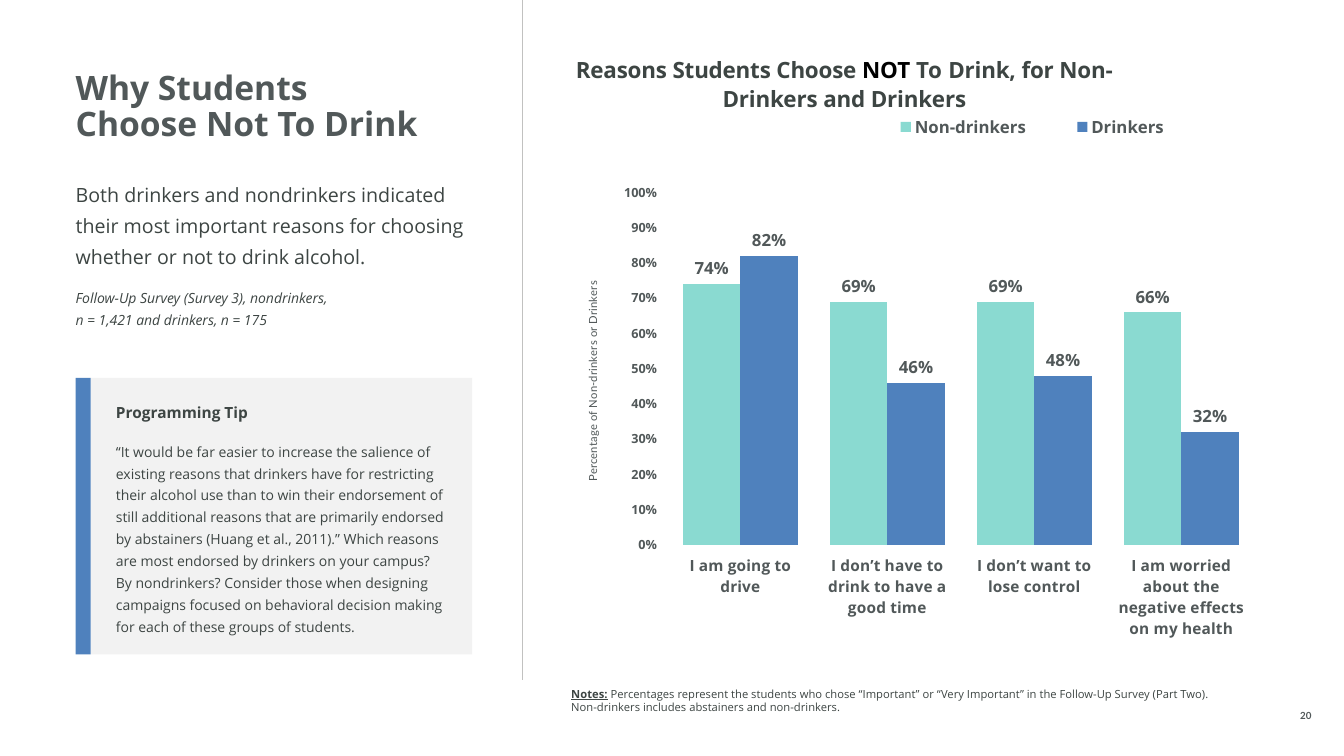
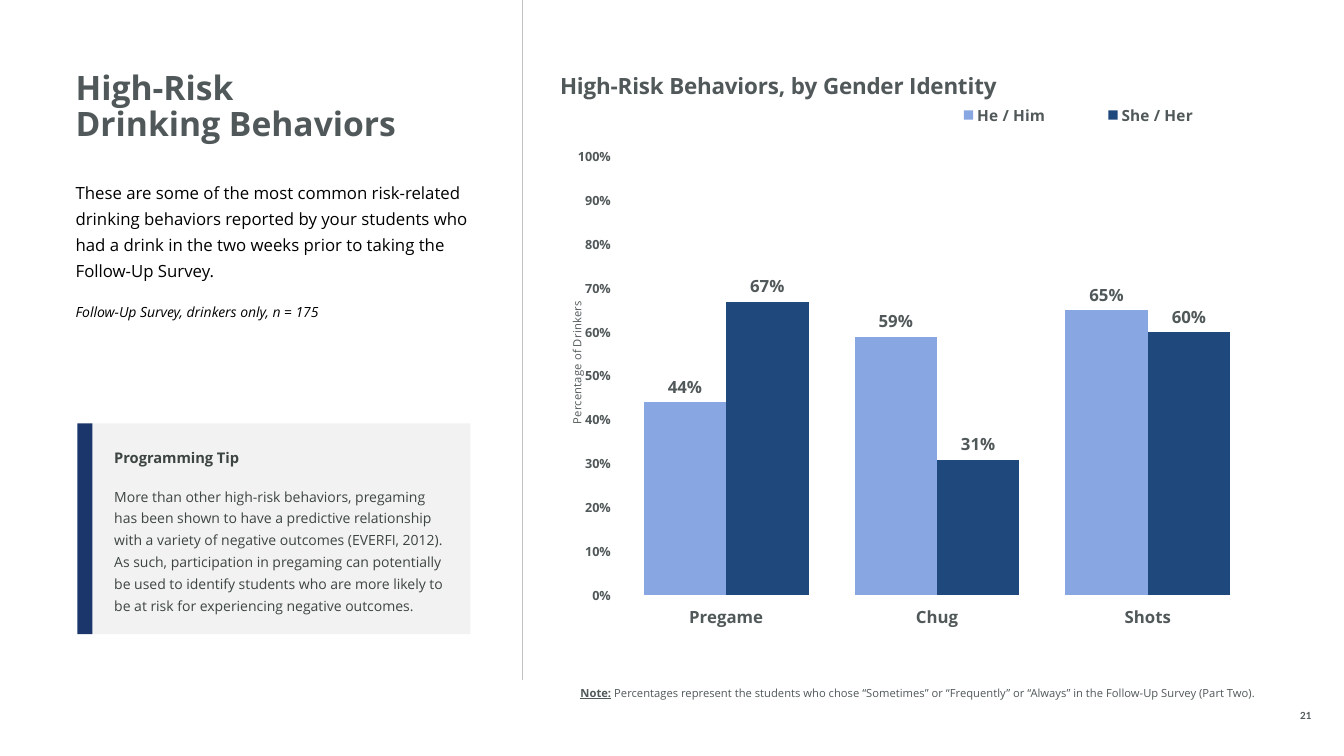
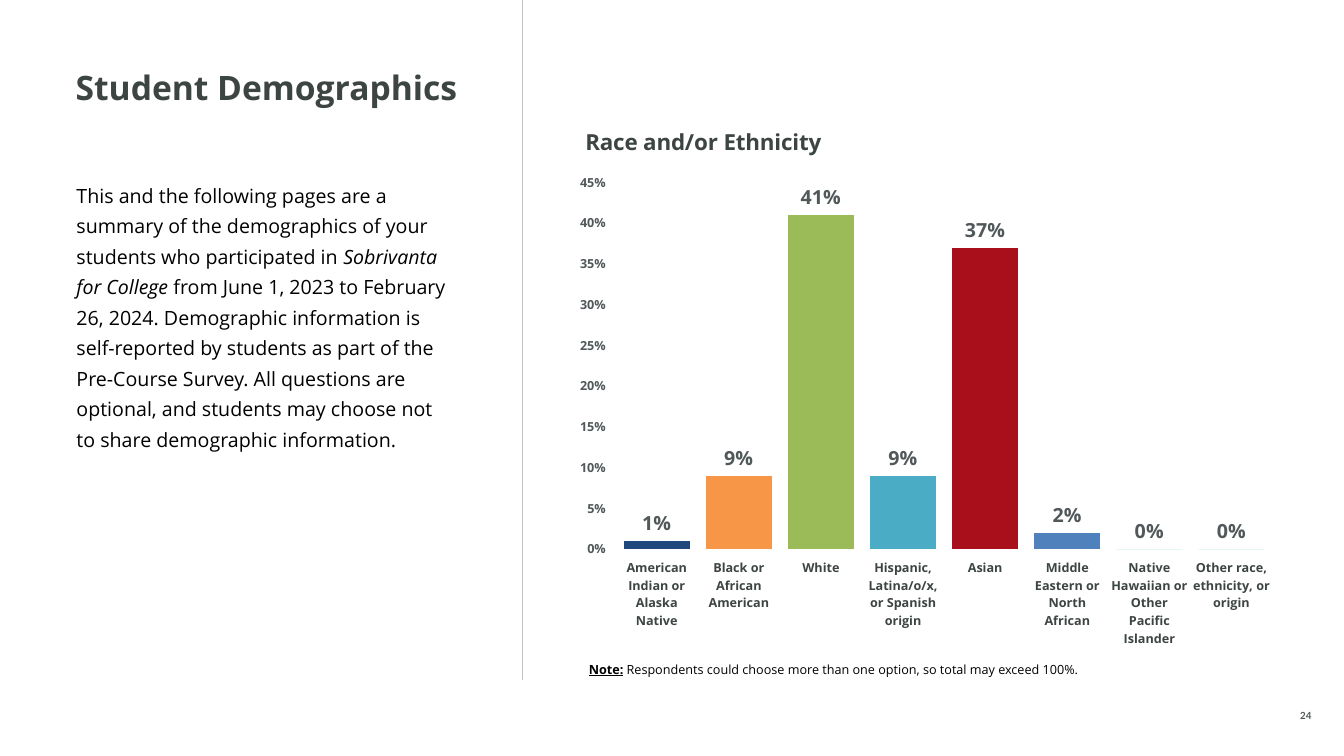
from dataclasses import dataclass
from typing import Optional

from lxml import etree
from pptx import Presentation
from pptx.chart.data import CategoryChartData
from pptx.dml.color import RGBColor
from pptx.enum.chart import XL_CHART_TYPE, XL_LABEL_POSITION, XL_LEGEND_POSITION
from pptx.enum.shapes import MSO_CONNECTOR, MSO_SHAPE
from pptx.enum.text import MSO_ANCHOR, PP_ALIGN
from pptx.oxml.ns import qn
from pptx.util import Emu, Inches, Pt

# Enum members
COLUMNS = XL_CHART_TYPE.COLUMN_CLUSTERED
OUTSIDE_END = XL_LABEL_POSITION.OUTSIDE_END
LEGEND_TOP = XL_LEGEND_POSITION.TOP
STRAIGHT = MSO_CONNECTOR.STRAIGHT
RECTANGLE = MSO_SHAPE.RECTANGLE
TOP, MIDDLE, BOTTOM = MSO_ANCHOR.TOP, MSO_ANCHOR.MIDDLE, MSO_ANCHOR.BOTTOM
LEFT, CENTER = PP_ALIGN.LEFT, PP_ALIGN.CENTER

# Slide grid: 160 columns by 90 rows
WIDTH, HEIGHT = Inches(13.33), Inches(7.5)
COLUMN, ROW = WIDTH / 160, HEIGHT / 90

# Theme
SANS, LATO = "Open Sans", "Lato"
BLACK = RGBColor(0x00, 0x00, 0x00)
INK = RGBColor(0x3D, 0x45, 0x43)
SLATE = RGBColor(0x51, 0x58, 0x59)
RULE = RGBColor(0xC1, 0xC1, 0xC0)
PALE = RGBColor(0xF2, 0xF2, 0xF2)
MINT = RGBColor(0x8A, 0xDA, 0xD1)
BLUE = RGBColor(0x4F, 0x81, 0xBD)
SKY = RGBColor(0x88, 0xA6, 0xE1)
DEEP_BLUE = RGBColor(0x1F, 0x49, 0x7D)
NAVY = RGBColor(0x1B, 0x36, 0x6A)
ORANGE = RGBColor(0xF7, 0x96, 0x46)
GREEN = RGBColor(0x9B, 0xBB, 0x59)
AQUA = RGBColor(0x4B, 0xAC, 0xC6)
RED = RGBColor(0xA9, 0x0E, 0x1B)
TEAL = RGBColor(0x3C, 0xBE, 0xAD)


@dataclass(frozen=True)
class Box:
    """An area in grid columns and rows."""
    left: float
    top: float
    width: float = 0
    height: float = 0

    def emu(self) -> tuple[Emu, Emu, Emu, Emu]:
        return (Emu(int(self.left * COLUMN)), Emu(int(self.top * ROW)),
                Emu(int(self.width * COLUMN)), Emu(int(self.height * ROW)))


@dataclass(frozen=True)
class Span:
    text: str
    bold: bool = False
    italic: bool = False
    underline: bool = False
    color: Optional[RGBColor] = None


@dataclass(frozen=True)
class Para:
    spans: list[Span]
    size: float
    before: float = 0


@dataclass(frozen=True)
class Tip:
    bar: Box
    panel: Box
    color: RGBColor
    heading_size: float
    advice: str


@dataclass(frozen=True)
class Series:
    name: str
    values: list[float]
    color: RGBColor


@dataclass(frozen=True)
class ChartSpec:
    area: Box
    plot: Box
    title: list[Span]
    title_at: Box
    title_color: RGBColor
    categories: list[str]
    series: list[Series]
    top_value: float
    step: float
    gap: int
    category_size: float
    label_size: float
    category_color: RGBColor = SLATE
    axis_title: str = ""
    axis_font: str = SANS
    axis_at: Optional[Box] = None
    legend: Optional[Box] = None
    legend_size: float = 12
    point_colors: tuple[RGBColor, ...] = ()


@dataclass(frozen=True)
class Page:
    number: str
    title: str
    title_color: RGBColor
    body_box: Box
    body: list[Para]
    body_color: RGBColor
    note_box: Box
    note: list[Para]
    note_color: RGBColor
    chart: ChartSpec
    tip: Optional[Tip] = None


def set_font(font, size: float, color: RGBColor, name: str = SANS,
             bold: bool = False) -> None:
    font.name, font.size, font.bold = name, Pt(size), bold
    font.color.rgb = color


def write_text(frame, paras: list[Para], *, color: RGBColor, font: str = SANS,
               spacing: Optional[float] = None, align=LEFT) -> None:
    for index, para in enumerate(paras):
        paragraph = frame.paragraphs[0] if index == 0 else frame.add_paragraph()
        paragraph.alignment = align
        if spacing:
            paragraph.line_spacing = spacing
        if para.before:
            paragraph.space_before = Pt(para.before)
        for span in para.spans:
            for line_index, line in enumerate(span.text.split("\n")):
                if line_index:
                    paragraph.add_line_break()
                run = paragraph.add_run()
                run.text = line
                set_font(run.font, para.size, span.color or color, font, span.bold)
                run.font.italic = span.italic
                run.font.underline = span.underline


def prepare_frame(frame, anchor=TOP, side: float = 0) -> None:
    frame.word_wrap = True
    frame.vertical_anchor = anchor
    frame.margin_left = frame.margin_right = Inches(side)
    frame.margin_top = frame.margin_bottom = 0


def add_text(slide, box: Box, paras: list[Para], *, anchor=TOP, **text_format) -> None:
    frame = slide.shapes.add_textbox(*box.emu()).text_frame
    prepare_frame(frame, anchor)
    write_text(frame, paras, **text_format)


def add_panel(slide, box: Box, color: RGBColor):
    panel = slide.shapes.add_shape(RECTANGLE, *box.emu())
    panel.shadow.inherit = False
    panel.fill.solid()
    panel.fill.fore_color.rgb = color
    panel.line.fill.background()
    return panel


def add_tip(slide, tip: Tip) -> None:
    frame = add_panel(slide, tip.panel, PALE).text_frame
    prepare_frame(frame, MIDDLE, 0.25)
    write_text(frame, [Para([Span("Programming Tip", bold=True)], tip.heading_size),
                       Para([Span(tip.advice)], 10, before=12)],
               color=INK, spacing=1.3)
    add_panel(slide, tip.bar, tip.color)


def add_divider(slide) -> None:
    x = Emu(int(62.2 * COLUMN))
    divider = slide.shapes.add_connector(STRAIGHT, x, 0, x, Emu(int(81 * ROW)))
    divider.line.color.rgb = RULE
    divider.line.width = Pt(1)
    etree.SubElement(divider._element.spPr, qn("a:effectLst"))


def place(element, index: int, box: Box, area: Box, inner: bool = False) -> None:
    """Give a chart part a fixed place, as shares of the chart area."""
    for old in element.findall(qn("c:layout")):
        element.remove(old)
    layout = etree.Element(qn("c:layout"))
    element.insert(index, layout)
    manual = etree.SubElement(layout, qn("c:manualLayout"))
    settings = [("layoutTarget", "inner")] if inner else []
    settings += [("xMode", "edge"), ("yMode", "edge"),
                 ("x", (box.left - area.left) / area.width),
                 ("y", (box.top - area.top) / area.height)]
    if box.width:
        settings += [("w", box.width / area.width), ("h", box.height / area.height)]
    for tag, value in settings:
        etree.SubElement(manual, qn(f"c:{tag}")).set("val", str(value))


def add_column_chart(slide, spec: ChartSpec) -> None:
    data = CategoryChartData(number_format="0%")
    data.categories = spec.categories
    for series in spec.series:
        data.add_series(series.name, series.values)
    chart = slide.shapes.add_chart(COLUMNS, *spec.area.emu(), data).chart
    set_font(chart.font, 8, SLATE, LATO)

    # Title and legend
    chart.has_title = True
    write_text(chart.chart_title.text_frame, [Para(spec.title, 16)],
               color=spec.title_color, align=CENTER)
    place(chart.chart_title._element, 1, spec.title_at, spec.area)
    chart.has_legend = spec.legend is not None
    if spec.legend:
        chart.legend.position = LEGEND_TOP
        chart.legend.include_in_layout = False
        set_font(chart.legend.font, spec.legend_size, SLATE, bold=True)
        place(chart.legend._element, 1, spec.legend, spec.area)

    # Axes
    categories, values = chart.category_axis, chart.value_axis
    for axis, size, color in ((categories, spec.category_size, spec.category_color),
                              (values, 9, SLATE)):
        set_font(axis.tick_labels.font, size, color, bold=True)
        axis.format.line.fill.background()
        axis.has_major_gridlines = False
    values.minimum_scale, values.maximum_scale = 0, spec.top_value
    values.major_unit = spec.step
    values.tick_labels.number_format = "0%"
    values.tick_labels.number_format_is_linked = False
    if spec.axis_at:
        write_text(values.axis_title.text_frame, [Para([Span(spec.axis_title)], 8)],
                   color=SLATE, font=spec.axis_font, align=CENTER)
        place(values.axis_title._element, 1, spec.axis_at, spec.area)

    # Columns and their labels
    plot = chart.plots[0]
    plot.vary_by_categories = False
    plot.gap_width, plot.overlap = spec.gap, 0
    plot.has_data_labels = True
    labels = plot.data_labels
    labels.show_value = True
    labels.position = OUTSIDE_END
    labels.number_format, labels.number_format_is_linked = "0%", False
    set_font(labels.font, spec.label_size, SLATE, bold=True)
    for drawn, series in zip(plot.series, spec.series):
        drawn.format.fill.solid()
        drawn.format.fill.fore_color.rgb = series.color
        for index, color in enumerate(spec.point_colors):
            fill = drawn.points[index].format.fill
            fill.solid()
            fill.fore_color.rgb = color
    place(chart._chartSpace.chart.plotArea, 0, spec.plot, spec.area, inner=True)


def add_page(deck, page: Page) -> None:
    slide = deck.slides.add_slide(deck.slide_layouts[6])
    add_divider(slide)
    add_text(slide, Box(9, 8.5, 47.3, 8.4), [Para([Span(page.title, bold=True)], 24)],
             color=page.title_color, spacing=0.9)
    add_text(slide, page.body_box, page.body, color=page.body_color, spacing=1.3)
    add_column_chart(slide, page.chart)
    add_text(slide, page.note_box, page.note, color=page.note_color, anchor=BOTTOM)
    add_text(slide, Box(152.4, 84.1, 6.1, 1.8), [Para([Span(page.number, bold=True)], 7)],
             color=SLATE, font=LATO, align=CENTER, anchor=BOTTOM)
    if page.tip:
        add_tip(slide, page.tip)


def note_lead(word: str) -> Span:
    return Span(word, bold=True, underline=True)


PAGES = [
    Page(
        "20", "Why Students\nChoose Not To Drink", SLATE, Box(9, 21, 47.3, 20.9),
        [Para([Span("Both drinkers and nondrinkers indicated their most important "
                    "reasons for choosing whether or not to drink alcohol.")], 14),
         Para([Span("Follow-Up Survey (Survey 3), nondrinkers,\n"
                    "n = 1,421 and drinkers, n = 175", italic=True)], 10, before=12)],
        INK, Box(68, 80.9, 81, 4.1),
        [Para([note_lead("Notes:"),
               Span(" Percentages represent the students who chose “Important” or "
                    "“Very Important” in the Follow-Up Survey (Part Two).")], 8),
         Para([Span("Non-drinkers includes abstainers and non-drinkers.")], 8)],
        INK,
        ChartSpec(
            area=Box(68, 5.6, 83, 72), plot=Box(79.4, 22.9, 70, 42),
            title=[Span("Reasons Students Choose ", bold=True),
                   Span("NOT", bold=True, color=BLACK),
                   Span(" To Drink, for Non-Drinkers and Drinkers", bold=True)],
            title_at=Box(68.2, 6), title_color=INK,
            categories=["I am going to drive",
                        "I don’t have to drink to have a good time",
                        "I don’t want to lose control",
                        "I am worried about the negative effects on my health"],
            series=[Series("Non-drinkers", [0.74, 0.69, 0.69, 0.66], MINT),
                    Series("Drinkers", [0.82, 0.46, 0.48, 0.32], BLUE)],
            top_value=1, step=0.1, gap=56, category_size=11, label_size=12,
            axis_title="Percentage of Non-drinkers or Drinkers", axis_font=LATO,
            axis_at=Box(69.3, 33.2), legend=Box(101.8, 12.6, 42.2, 5)),
        Tip(Box(9, 45, 1.8, 32.9), Box(10.8, 45, 45.4, 32.9), BLUE, 11,
            "“It would be far easier to increase the salience of existing reasons that "
            "drinkers have for restricting their alcohol use than to win their "
            "endorsement of still additional reasons that are primarily endorsed by "
            "abstainers (Huang et al., 2011).” Which reasons are most endorsed by "
            "drinkers on your campus? By nondrinkers? Consider those when designing "
            "campaigns focused on behavioral decision making for each of these groups "
            "of students.")),
    Page(
        "21", "High-Risk\nDrinking Behaviors", SLATE, Box(9, 21, 47.3, 21.7),
        [Para([Span("These are some of the most common risk-related drinking behaviors "
                    "reported by your students who had a drink in the two weeks prior "
                    "to taking the Follow-Up Survey.")], 12),
         Para([Span("Follow-Up Survey, drinkers only, n = 175", italic=True)], 10,
              before=12)],
        BLACK, Box(69.1, 80.9, 80.8, 2.4),
        [Para([note_lead("Note:"),
               Span(" Percentages represent the students who chose “Sometimes” or "
                    "“Frequently” or “Always” in the Follow-Up Survey (Part Two).")], 8)],
        SLATE,
        ChartSpec(
            area=Box(65.6, 6.7, 85.4, 72), plot=Box(73.9, 18.7, 75.3, 52.2),
            title=[Span("High-Risk Behaviors, by Gender Identity", bold=True)],
            title_at=Box(66.2, 7.7), title_color=SLATE,
            categories=["Pregame", "Chug", "Shots"],
            series=[Series("He / Him", [0.44, 0.59, 0.65], SKY),
                    Series("She / Her", [0.67, 0.31, 0.6], DEEP_BLUE)],
            top_value=1, step=0.1, gap=56, category_size=12, label_size=12,
            axis_title="Percentage of Drinkers", axis_at=Box(67.3, 35.6),
            legend=Box(107.9, 11.2, 41, 5), legend_size=11),
        Tip(Box(9.2, 50.4, 1.8, 25.1), Box(10.6, 50.4, 45.4, 25.1), NAVY, 10.5,
            "More than other high-risk behaviors, pregaming has been shown to have a "
            "predictive relationship with a variety of negative outcomes (EVERFI, "
            "2012). As such, participation in pregaming can potentially be used to "
            "identify students who are more likely to be at risk for experiencing "
            "negative outcomes.")),
    Page(
        "24", "Student Demographics", INK, Box(9.1, 21, 44.7, 36.8),
        [Para([Span("This and the following pages are a summary of the demographics of "
                    "your students who participated in "),
               Span("Sobrivanta for College ", italic=True),
               Span("from June 1, 2023 to February 26, 2024. Demographic information is "
                    "self-reported by students as part of the Pre-Course Survey. All "
                    "questions are optional, and students may choose not to share "
                    "demographic information.")], 14)],
        BLACK, Box(70.1, 76.3, 82.3, 4.3),
        [Para([note_lead("Note:"),
               Span(" Respondents could choose more than one option, so total may "
                    "exceed 100%.")], 9)],
        BLACK,
        ChartSpec(
            area=Box(64.1, 13.4, 90, 63.7), plot=Box(73.3, 21.8, 78.2, 44),
            title=[Span("Race and/or Ethnicity", bold=True)],
            title_at=Box(69.2, 14.4), title_color=INK,
            categories=["American Indian or Alaska Native",
                        "Black or African American", "White",
                        "Hispanic, Latina/o/x, or Spanish origin", "Asian",
                        "Middle Eastern or North African",
                        "Native Hawaiian or Other Pacific Islander",
                        "Other race, ethnicity, or origin"],
            series=[Series("Series 1", [0.01, 0.09, 0.41, 0.09, 0.37, 0.02, 0, 0], TEAL)],
            top_value=0.45, step=0.05, gap=25, category_size=9, label_size=14,
            category_color=INK,
            point_colors=(DEEP_BLUE, ORANGE, GREEN, AQUA, RED, BLUE))),
]


def main() -> None:
    deck = Presentation()
    deck.slide_width, deck.slide_height = WIDTH, HEIGHT
    for page in PAGES:
        add_page(deck, page)
    deck.save("out.pptx")


if __name__ == "__main__":
    main()
